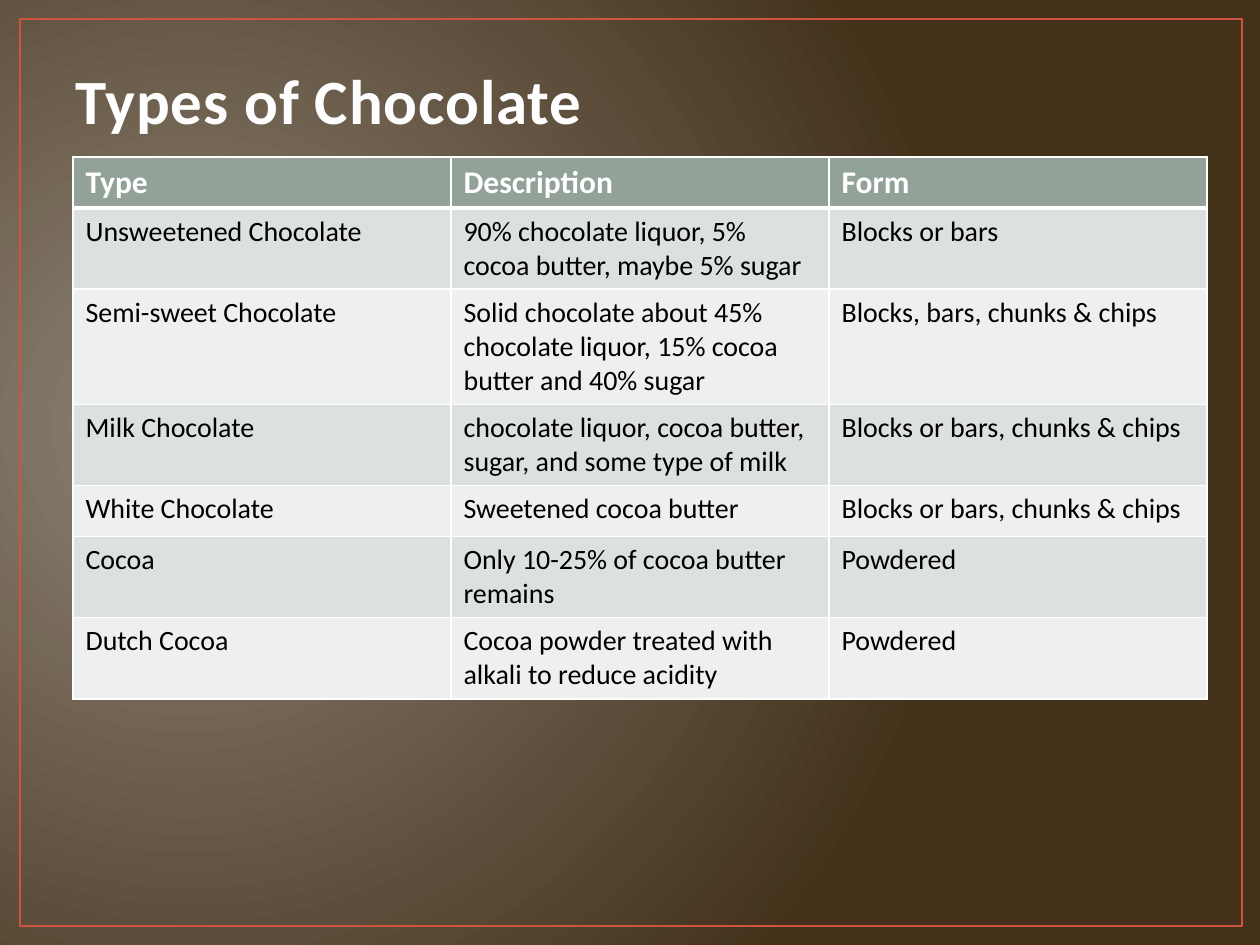
from dataclasses import dataclass

from lxml.etree import SubElement
from pptx import Presentation
from pptx.dml.color import RGBColor
from pptx.enum.shapes import MSO_SHAPE
from pptx.enum.text import MSO_ANCHOR, PP_ALIGN
from pptx.oxml.ns import qn
from pptx.slide import Slide
from pptx.util import Emu, Pt

GLOW = RGBColor(0x8D, 0x83, 0x76)
BROWN = RGBColor(0x43, 0x31, 0x1A)
RUST = RGBColor(0xCF, 0x54, 0x3F)
IVORY = RGBColor(0xFE, 0xFE, 0xFE)
WHITE = RGBColor(0xFF, 0xFF, 0xFF)
BLACK = RGBColor(0x00, 0x00, 0x00)
SAGE = RGBColor(0x93, 0xA2, 0x99)
BANDS = (RGBColor(0xEE, 0xF0, 0xEF), RGBColor(0xDC, 0xE0, 0xDE))

CHOCOLATES = [
    ("Type", "Description", "Form"),
    ("Unsweetened Chocolate", "90% chocolate liquor, 5% cocoa butter, maybe 5% sugar", "Blocks or bars"),
    ("Semi-sweet Chocolate", "Solid chocolate about 45% chocolate liquor, 15% cocoa butter and 40% sugar",
     "Blocks, bars, chunks & chips"),
    ("Milk Chocolate", "chocolate liquor, cocoa butter, sugar, and some type of milk",
     "Blocks or bars, chunks & chips"),
    ("White Chocolate", "Sweetened cocoa butter", "Blocks or bars, chunks & chips"),
    ("Cocoa", "Only 10-25% of cocoa butter remains", "Powdered"),
    ("Dutch Cocoa", "Cocoa powder treated with alkali to reduce acidity", "Powdered"),
]


def px(count):
    return Emu(round(count * 914400 / 126))


@dataclass
class Painter:
    """Holds the style and the slide being drawn."""

    page: Slide
    face: str = "Calibri"

    def style(self, paragraph, size, color, bold=False):
        font = paragraph.font
        font.name, font.size, font.bold = self.face, Pt(size), bold
        font.color.rgb = color

    def background(self, inner, outer):
        fill = self.page.background.fill
        fill.gradient()
        for stop, color, position in zip(fill.gradient_stops, (inner, outer), (0, 1)):
            stop.color.rgb = color
            stop.position = position
        gradient = self.page.element.find(".//" + qn("a:gradFill"))
        gradient.remove(gradient.find(qn("a:lin")))
        circle = SubElement(gradient, qn("a:path"), path="circle")
        SubElement(circle, qn("a:fillToRect"), l="15000", t="50000", r="85000", b="60000")

    def frame(self, left, top, width, height, color):
        box = self.page.shapes.add_shape(MSO_SHAPE.RECTANGLE, px(left), px(top), px(width), px(height))
        box.shadow.inherit = False
        box.fill.background()
        box.line.color.rgb = color
        box.line.width = Pt(1.5)

    def title(self, text, left, top, width, height):
        box = self.page.shapes.title
        box.left, box.top, box.width, box.height = px(left), px(top), px(width), px(height)
        box.text_frame.vertical_anchor = MSO_ANCHOR.BOTTOM
        para = box.text_frame.paragraphs[0]
        para.alignment = PP_ALIGN.LEFT
        span = para.add_run()
        span.text = text
        self.style(para, 36, IVORY, bold=True)
        span.font._element.set("spc", "50")

    def borders(self, cell, top, bottom):
        properties = cell._tc.get_or_add_tcPr()
        for side, width in (("L", 1), ("R", 1), ("T", top), ("B", bottom)):
            line = SubElement(properties, qn(f"a:ln{side}"), w=str(Pt(width)))
            fill = SubElement(line, qn("a:solidFill"))
            SubElement(fill, qn("a:srgbClr"), val=str(WHITE))

    def table(self, rows, left, top, column_width, row_height):
        columns = len(rows[0])
        grid = self.page.shapes.add_table(
            len(rows), columns, px(left), px(top),
            px(column_width * columns), px(row_height * len(rows))).table
        for r, row in enumerate(rows):
            header = r == 0
            for c, text in enumerate(row):
                cell = grid.cell(r, c)
                cell.text = text
                self.borders(cell, top=3 if r == 1 else 1, bottom=3 if header else 1)
                cell.fill.solid()
                cell.fill.fore_color.rgb = SAGE if header else BANDS[r % 2]
                self.style(cell.text_frame.paragraphs[0], 18 if header else 16,
                           WHITE if header else BLACK, bold=header)


def main():
    deck = Presentation()
    deck.slide_width, deck.slide_height = px(1260), px(945)
    painter = Painter(deck.slides.add_slide(deck.slide_layouts[5]))
    painter.background(GLOW, BROWN)
    painter.frame(20, 19, 1222, 907, RUST)
    painter.title("Types of Chocolate", 63, 42, 1134, 101)
    painter.table(CHOCOLATES, 73, 157, 378, 51)
    deck.save("out.pptx")


if __name__ == "__main__":
    main()
